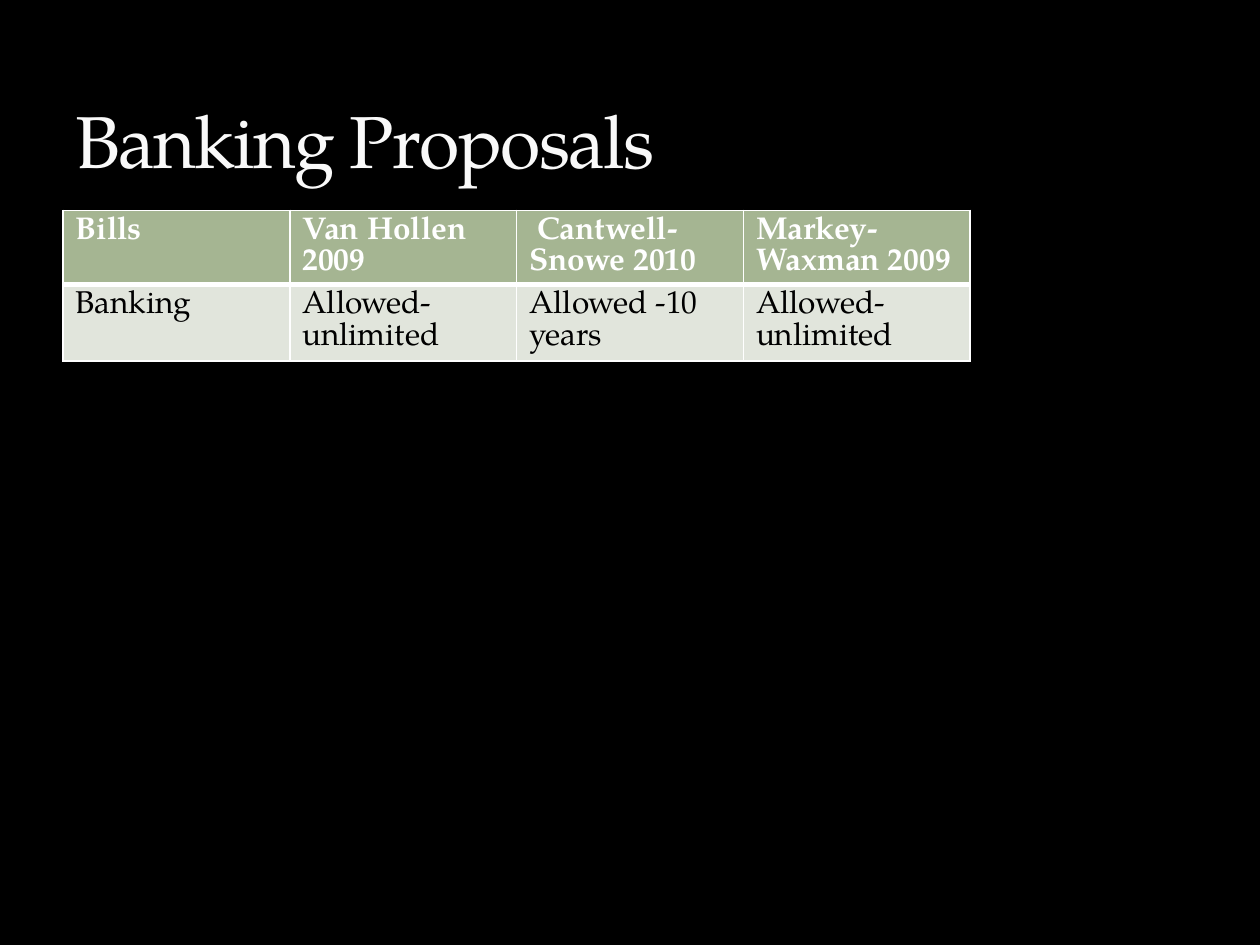
"""Build the Banking Proposals slide: a title above a table of bills."""
from lxml import etree
from pptx import Presentation, util as u
from pptx.dml.color import RGBColor
from pptx.enum import text
from pptx.oxml import parse_xml
from pptx.oxml.ns import nsdecls, qn

COLORS = {"page": "000000", "title": "F9F9F9", "outline": "3C4422", "border": "FFFFFF"}
FONT = "TeX Gyre Pagella"
ROW_STYLES = [
    {"fill": "A5B592", "color": "FFFFFF", "bold": True, "borders": {"L": 1, "R": 1, "T": 1, "B": 3}},
    {"fill": "E1E5DC", "color": "000000", "bold": False, "borders": {"L": 1, "R": 1, "T": 3, "B": 1}},
]
BILLS = [
    ["Bills", "Van Hollen\n2009", " Cantwell-Snowe 2010", "Markey-Waxman 2009"],
    ["Banking", "Allowed-unlimited", "Allowed -10 years", "Allowed-unlimited"],
]


def style_font(font, color, **values):
    font.color.rgb = RGBColor.from_string(color)
    for name, value in {"name": FONT, **values}.items():
        setattr(font, name, value)


def line_xml(tag, color, points, alpha=100):
    return parse_xml(
        f'<a:{tag} {nsdecls("a")} w="{int(u.Pt(points))}"><a:solidFill><a:srgbClr val="{color}">'
        f'<a:alpha val="{alpha * 1000}"/></a:srgbClr></a:solidFill><a:prstDash val="solid"/></a:{tag}>'
    )


deck = Presentation()
deck.slide_width, deck.slide_height = u.Inches(10), u.Inches(7.5)
page = deck.slides.add_slide(deck.slide_layouts[6])
page.background.fill.solid()
page.background.fill.fore_color.rgb = RGBColor.from_string(COLORS["page"])

margin = int(deck.slide_width * 0.05)
column_width = int(deck.slide_width * 0.18)
row_height = u.Inches(0.41)

frame = page.shapes.add_table(
    len(BILLS), len(BILLS[0]), margin, u.Inches(1.67), column_width * len(BILLS[0]), row_height * len(BILLS)
)
table = frame.table
for column in table.columns:
    column.width = column_width
for row, labels, style in zip(table.rows, BILLS, ROW_STYLES):
    row.height = row_height
    for cell, label in zip(row.cells, labels):
        cell.text = label
        for para in cell.text_frame.paragraphs:
            for span in para.runs:
                style_font(span.font, style["color"], size=u.Pt(18), bold=style["bold"])
        properties = cell._tc.get_or_add_tcPr()
        for side, points in style["borders"].items():
            properties.append(line_xml(f"ln{side}", COLORS["border"], points))
        cell.fill.solid()
        cell.fill.fore_color.rgb = RGBColor.from_string(style["fill"])

box = page.shapes.add_textbox(margin, u.Inches(0.17), deck.slide_width - 2 * margin, u.Inches(1.33))
for name, value in {"word_wrap": True, "vertical_anchor": text.MSO_ANCHOR.BOTTOM}.items():
    setattr(box.text_frame, name, value)
span = box.text_frame.paragraphs[0].add_run()
span.text = "Banking Proposals"
style_font(span.font, COLORS["title"], size=u.Pt(42))
run_properties = span._r.get_or_add_rPr()
run_properties.set("spc", "-100")
run_properties.insert(0, line_xml("ln", COLORS["outline"], 0.25, alpha=25))

deck.save("out.pptx")
